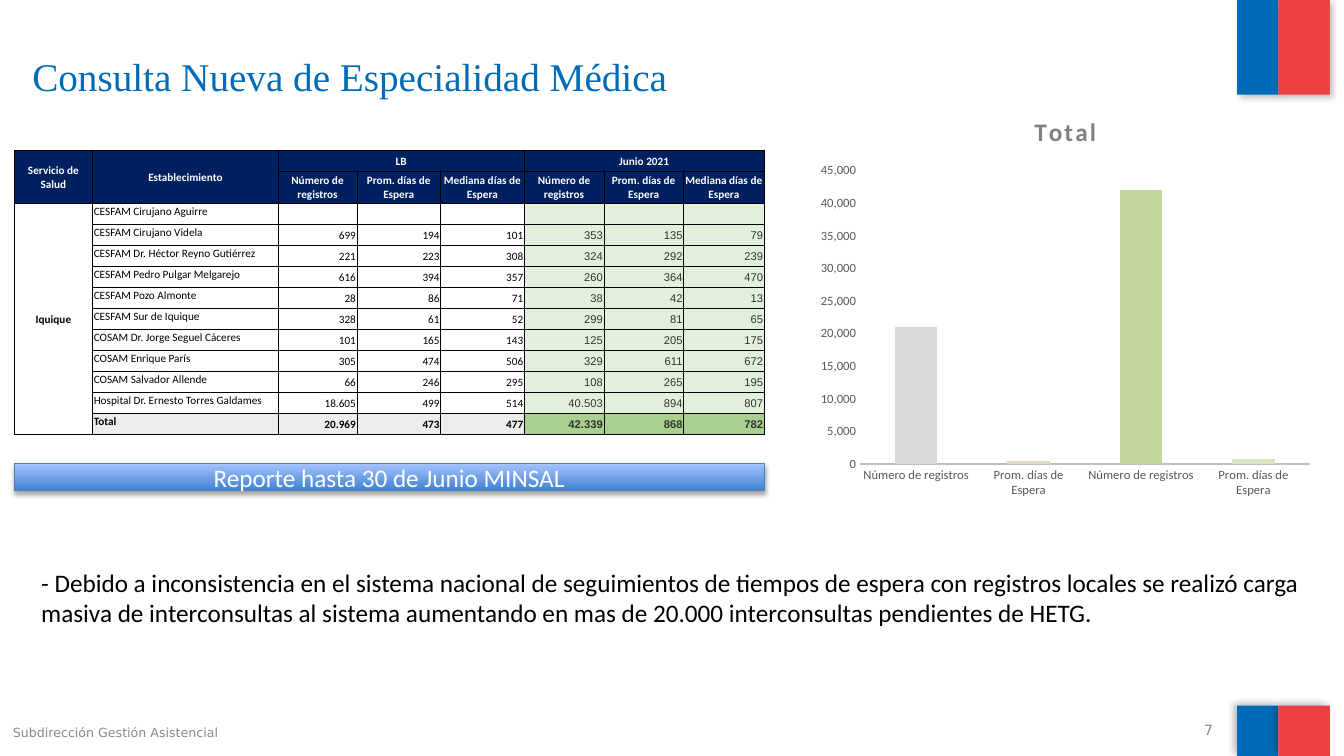
import pptx
import pptx.util
import pptx.chart.data
import pptx.dml.color
import pptx.enum.chart
import pptx.enum.shapes
import pptx.enum.text
import pptx.oxml
import pptx.oxml.ns
from lxml import etree

TITLE = "Consulta Nueva de Especialidad Médica"
FOOTER = "Subdirección Gestión Asistencial"
PAGE = "7"
REPORT = "Reporte hasta 30 de Junio MINSAL"
REMARK = (
    "- Debido a inconsistencia en el sistema nacional de seguimientos de tiempos de espera "
    "con registros locales se realizó carga masiva de interconsultas al sistema aumentando "
    "en mas de 20.000 interconsultas pendientes de HETG."
)
MEASURES = ["Número de registros", "Prom. días de Espera", "Mediana días de Espera"]
WAITING_LIST = [
    ["Servicio de Salud", "Establecimiento", "LB", "", "", "Junio 2021", "", ""],
    ["", ""] + MEASURES * 2,
    ["Iquique", "CESFAM Cirujano Aguirre", "", "", "", "", "", ""],
    ["", "CESFAM Cirujano Videla", "699", "194", "101", "353", "135", "79"],
    ["", "CESFAM Dr. Héctor Reyno Gutiérrez", "221", "223", "308", "324", "292", "239"],
    ["", "CESFAM Pedro Pulgar Melgarejo", "616", "394", "357", "260", "364", "470"],
    ["", "CESFAM Pozo Almonte", "28", "86", "71", "38", "42", "13"],
    ["", "CESFAM Sur de Iquique", "328", "61", "52", "299", "81", "65"],
    ["", "COSAM Dr. Jorge Seguel Cáceres", "101", "165", "143", "125", "205", "175"],
    ["", "COSAM Enrique París", "305", "474", "506", "329", "611", "672"],
    ["", "COSAM Salvador Allende", "66", "246", "295", "108", "265", "195"],
    ["", "Hospital Dr. Ernesto Torres Galdames", "18.605", "499", "514", "40.503", "894", "807"],
    ["", "Total", "20.969", "473", "477", "42.339", "868", "782"],
]
MERGES = [((0, 0), (1, 0)), ((0, 1), (1, 1)), ((0, 2), (0, 4)), ((0, 5), (0, 7)), ((2, 0), (12, 0))]
COLUMN_WIDTHS = [0.78, 1.84, 0.78, 0.83, 0.83, 0.79, 0.79, 0.8]
TABLE_HEIGHT, MEASURES_HEIGHT = 2.82, 0.32
LINE_HEIGHT = (TABLE_HEIGHT - MEASURES_HEIGHT) / (len(WAITING_LIST) - 1)
ROW_HEIGHTS = [LINE_HEIGHT, MEASURES_HEIGHT] + [LINE_HEIGHT] * (len(WAITING_LIST) - 2)
CHART_TITLE = "Total"
CHART_BARS = [
    (MEASURES[0], 21000, "lb_count"),
    (MEASURES[1], 500, "lb_days"),
    (MEASURES[0], 42000, "june_count"),
    (MEASURES[1], 900, "june_days"),
]
COLORS = {
    "blue": "006CB7", "red": "EF4144", "black": "000000", "white": "FFFFFF",
    "navy": "002060", "mint": "E2EFDA", "green": "A9D08E", "silver": "EDEDED",
    "ink": "333333", "footer": "898989", "axis_text": "595959", "axis_line": "BFBFBF",
    "chart_title": "808080", "report_low": "3F80CE", "report_high": "A4C4FF",
    "report_line": "4B7EBC", "lb_count": "D9D9D9", "lb_days": "DDD9C3",
    "june_count": "C3D69B", "june_days": "D7E4BD",
}
WIDTH, HEIGHT = 13.33, 7.5
TABLE_LEFT, TABLE_TOP, TABLE_WIDTH = 0.14, 1.49, sum(COLUMN_WIDTHS)
FLAG_SPLIT, FLAG_BLUE, FLAG_RED = 12.68, 0.41, 0.51
FLAG_BANDS = [(0, 0.94, 45), (7, HEIGHT - 7, 215)]

Inches, Pt = pptx.util.Inches, pptx.util.Pt
ALIGN = pptx.enum.text.PP_ALIGN
ANCHOR = pptx.enum.text.MSO_ANCHOR
RECTANGLE = pptx.enum.shapes.MSO_SHAPE.RECTANGLE
NS = pptx.oxml.ns.nsdecls("a")


def rgb(name):
    return pptx.dml.color.RGBColor.from_string(COLORS[name])


def box(left, top, width, height):
    return [Inches(side) for side in (left, top, width, height)]


def style(font, size, color, family="Calibri", bold=False):
    font.size, font.name, font.bold = Pt(size), family, bold
    font.color.rgb = rgb(color)


def write(frame, text, size, color, family="Calibri", align=ALIGN.LEFT, anchor=ANCHOR.TOP, bold=False):
    frame.text = text
    frame.word_wrap = True
    frame.vertical_anchor = anchor
    paragraph = frame.paragraphs[0]
    paragraph.alignment = align
    for run in paragraph.runs:
        style(run.font, size, color, family, bold)
    if not text:
        ending = etree.SubElement(paragraph._p, pptx.oxml.ns.qn("a:endParaRPr"))
        ending.set("sz", str(size * 100))


def cast_shadow(shape, opacity, blur, distance, angle):
    shape.shadow.inherit = False
    effects = shape._element.spPr.find(pptx.oxml.ns.qn("a:effectLst"))
    effects.append(pptx.oxml.parse_xml(
        f'<a:outerShdw {NS} blurRad="{Pt(blur)}" dist="{Pt(distance)}" dir="{angle * 60000}" '
        f'algn="ctr" rotWithShape="0"><a:srgbClr val="{COLORS["black"]}">'
        f'<a:alpha val="{opacity * 1000}"/></a:srgbClr></a:outerShdw>'))


def draw_borders(cell, row, column):
    heading = row < 2
    widths = {
        "lnL": 1 if column == 0 or (heading and column == 5) else 0.5,
        "lnR": 1 if heading and column == 4 else 0.5,
        "lnT": 1 if row == 0 else 0.5,
        "lnB": 0.5,
    }
    for side, width in widths.items():
        cell._tc.get_or_add_tcPr().append(pptx.oxml.parse_xml(
            f'<a:{side} {NS} w="{Pt(width)}"><a:solidFill>'
            f'<a:srgbClr val="{COLORS["black"]}"/></a:solidFill></a:{side}>'))


def cell_fill(row, column):
    if row < 2:
        return "navy"
    last = row == len(WAITING_LIST) - 1
    if column >= 5:
        return "green" if last else "mint"
    return "silver" if last and column else None


def add_waiting_list(slide):
    frame = slide.shapes.add_table(
        len(ROW_HEIGHTS), len(COLUMN_WIDTHS),
        *box(TABLE_LEFT, TABLE_TOP, TABLE_WIDTH, TABLE_HEIGHT))
    table = frame.table
    table.first_row = table.horz_banding = False
    for column, width in zip(table.columns, COLUMN_WIDTHS):
        column.width = Inches(width)
    for row, height in zip(table.rows, ROW_HEIGHTS):
        row.height = Inches(height)
    for r, values in enumerate(WAITING_LIST):
        for c, value in enumerate(values):
            cell = table.cell(r, c)
            cell.margin_left = cell.margin_right = cell.margin_top = Inches(0.01)
            cell.margin_bottom = 0
            draw_borders(cell, r, c)
            fill = cell_fill(r, c)
            if fill:
                cell.fill.solid()
                cell.fill.fore_color.rgb = rgb(fill)
            else:
                cell.fill.background()
            heading = r < 2
            june = c >= 5 and not heading
            align = ALIGN.CENTER if heading or c == 0 else ALIGN.LEFT if c == 1 else ALIGN.RIGHT
            anchor = ANCHOR.TOP if c == 1 and not heading else ANCHOR.MIDDLE
            write(cell.text_frame, value, 8, "white" if heading else "ink" if june else "black",
                  "Arial" if june else "Calibri", align,
                  bold=heading or c == 0 or r == len(WAITING_LIST) - 1)
            cell.vertical_anchor = anchor
    for first, last in MERGES:
        table.cell(*first).merge(table.cell(*last))


def add_totals_chart(slide):
    data = pptx.chart.data.CategoryChartData(number_format="#,##0")
    data.categories = [name for name, _, _ in CHART_BARS]
    data.add_series(CHART_TITLE, [value for _, value, _ in CHART_BARS])
    chart = slide.shapes.add_chart(
        pptx.enum.chart.XL_CHART_TYPE.COLUMN_CLUSTERED, *box(8.04, 0.95, 5.05, 4.07), data).chart
    style(chart.font, 10, "black")
    chart.has_legend = False
    chart.has_title = True
    heading = chart.chart_title.text_frame
    heading.text = CHART_TITLE
    run = heading.paragraphs[0].runs[0]
    style(run.font, 18, "chart_title", bold=True)
    run.font._element.set("spc", "150")
    plot = chart.plots[0]
    plot.gap_width, plot.overlap, plot.vary_by_categories = 164, -22, False
    for index, (_, _, color) in enumerate(CHART_BARS):
        fill = plot.series[0].points[index].format.fill
        fill.solid()
        fill.fore_color.rgb = rgb(color)
    for axis in (chart.category_axis, chart.value_axis):
        axis.has_major_gridlines = False
        axis.major_tick_mark = axis.minor_tick_mark = pptx.enum.chart.XL_TICK_MARK.NONE
        style(axis.tick_labels.font, 9, "axis_text")
    chart.category_axis.format.line.color.rgb = rgb("axis_line")
    chart.category_axis.format.line.width = Pt(1.5)
    values = chart.value_axis
    values.format.line.fill.background()
    values.minimum_scale, values.maximum_scale, values.major_unit = 0, 45000, 5000
    values.tick_labels.number_format = "#,##0"
    values.tick_labels.number_format_is_linked = False


def add_text(slide, place, *args, **kwargs):
    write(slide.shapes.add_textbox(*box(*place)).text_frame, *args, **kwargs)


def main():
    deck = pptx.Presentation()
    deck.slide_width, deck.slide_height = Inches(WIDTH), Inches(HEIGHT)
    slide = deck.slides.add_slide(deck.slide_layouts[5])

    for top, height, angle in FLAG_BANDS:
        for left, width, color in ((FLAG_SPLIT - FLAG_BLUE, FLAG_BLUE, "blue"), (FLAG_SPLIT, FLAG_RED, "red")):
            band = slide.shapes.add_shape(RECTANGLE, *box(left, top, width, height))
            band.fill.solid()
            band.fill.fore_color.rgb = rgb(color)
            band.line.fill.background()
            cast_shadow(band, 25, 5, 3, angle)

    title = slide.shapes.title
    title.left, title.top, title.width, title.height = box(0.22, 0.47, 11.91, 0.86)
    write(title.text_frame, TITLE, 28, "blue", "Times New Roman")
    add_text(slide, (0.03, 7.14, 4.22, 0.27), FOOTER, 9, "footer", "DejaVu Sans")
    add_text(slide, (9.02, 7.14, 3.11, 0.21), PAGE, 10, "footer", "DejaVu Sans",
             ALIGN.RIGHT, ANCHOR.MIDDLE)

    add_waiting_list(slide)

    report = slide.shapes.add_shape(RECTANGLE, *box(TABLE_LEFT, 4.6, TABLE_WIDTH, 0.27))
    report.fill.gradient()
    report.fill.gradient_angle = 90
    for stop, color in zip(report.fill.gradient_stops, ("report_low", "report_high")):
        stop.color.rgb = rgb(color)
    report.line.color.rgb = rgb("report_line")
    report.line.width = Pt(0.75)
    cast_shadow(report, 35, 3.1, 1.8, 90)
    write(report.text_frame, REPORT, 18, "white", align=ALIGN.CENTER, anchor=ANCHOR.MIDDLE)

    add_text(slide, (0.31, 5.58, 12.78, 0.71), REMARK, 18, "black")
    add_totals_chart(slide)
    deck.save("out.pptx")


if __name__ == "__main__":
    main()
